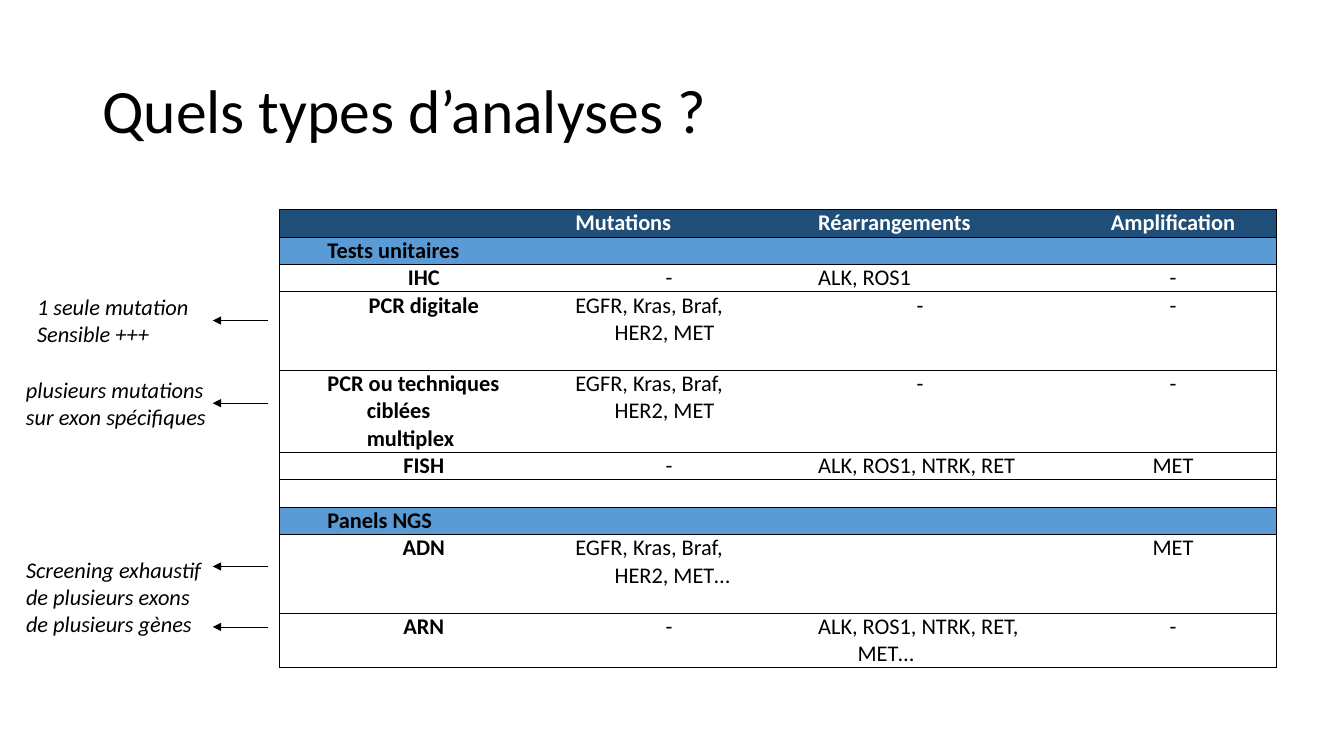
"""Build the slide that compares the types of molecular analyses."""
from lxml.etree import SubElement
from pptx import Presentation
from pptx.dml.color import RGBColor
from pptx.enum.shapes import MSO_CONNECTOR
from pptx.enum.text import MSO_ANCHOR, MSO_AUTO_SIZE, PP_ALIGN
from pptx.oxml.ns import qn
from pptx.util import Pt

BLACK, WHITE, NAVY, BLUE = "000000", "FFFFFF", "1F4E79", "5B9BD5"


def color(hex_code):
    return RGBColor.from_string(hex_code)


def format_font(font, hex_code=BLACK, **values):
    for key, value in {"name": "Calibri", "size": Pt(16), **values}.items():
        setattr(font, key, value)
    font.color.rgb = color(hex_code)


deck = Presentation()
deck.slide_width, deck.slide_height = Pt(960), Pt(540)
slide = deck.slides.add_slide(deck.slide_layouts[5])

title = slide.shapes.title
title.left, title.top, title.width, title.height = Pt(66), Pt(28.8), Pt(828), Pt(104.4)
title.text_frame.text = "Quels types d’analyses ?"
title.text_frame.auto_size = MSO_AUTO_SIZE.NONE
title.text_frame.vertical_anchor = MSO_ANCHOR.MIDDLE
heading = title.text_frame.paragraphs[0]
heading.alignment, heading.line_spacing = PP_ALIGN.LEFT, 0.9
format_font(heading.runs[0].font, size=Pt(44))

LINE, TWO_LINES, THREE_LINES = 19.6, 39, 56
column_widths = [177.1, 173.5, 185, 176.4]
analyses = [
    (LINE, ["", "Mutations", "Réarrangements", "Amplification"]),
    (LINE, ["Tests unitaires", "", "", ""]),
    (LINE, ["IHC", "-", "ALK, ROS1", "-"]),
    (THREE_LINES, ["PCR digitale", "EGFR, Kras, Braf, HER2, MET", "-", "-"]),
    (THREE_LINES, ["PCR ou techniques ciblées multiplex", "EGFR, Kras, Braf, HER2, MET", "-", "-"]),
    (LINE, ["FISH", "-", "ALK, ROS1, NTRK, RET", "MET"]),
    (LINE, ["", "", "", ""]),
    (LINE, ["Panels NGS", "", "", ""]),
    (THREE_LINES, ["ADN", "EGFR, Kras, Braf, HER2, MET…", "", "MET"]),
    (TWO_LINES, ["ARN", "-", "ALK, ROS1, NTRK, RET, MET…", "-"]),
]
row_fills = {0: NAVY, 1: BLUE, 7: BLUE}
centred_labels = {"IHC", "PCR digitale", "FISH", "ADN", "ARN", "-"}
last_column = len(column_widths) - 1

grid = slide.shapes.add_table(
    len(analyses), len(column_widths), Pt(199.4), Pt(149.6),
    Pt(sum(column_widths)), Pt(sum(height for height, _ in analyses))).table
grid.first_row = grid.horz_banding = False
grid._tbl.tblPr.find(qn("a:tableStyleId")).text = "{2D5ABB26-0587-4C30-8999-92F81FD0307C}"
for column, width in zip(grid.columns, column_widths):
    column.width = Pt(width)

for r, (height, labels) in enumerate(analyses):
    grid.rows[r].height = Pt(height)
    for c, label in enumerate(labels):
        cell = grid.cell(r, c)
        cell.margin_left = cell.margin_right = Pt(5)
        cell.margin_top = cell.margin_bottom = 0
        sides = ["lnL"] * (c == 0) + ["lnR"] * (c == last_column) + ["lnT", "lnB"]
        for side in sides:
            border = SubElement(cell._tc.get_or_add_tcPr(), qn(f"a:{side}"), w=str(Pt(0.5)))
            SubElement(SubElement(border, qn("a:solidFill")), qn("a:srgbClr"), val=BLACK)
        if r in row_fills:
            cell.fill.solid()
            cell.fill.fore_color.rgb = color(row_fills[r])
        else:
            cell.fill.background()

        paragraph = cell.text_frame.paragraphs[0]
        if not label:
            SubElement(paragraph._p, qn("a:endParaRPr"), sz="1600")
            continue
        layout = paragraph._p.get_or_add_pPr()
        layout.set("marL", str(Pt(57.6)))
        layout.set("indent", str(Pt(-28.1)))
        centred = label in centred_labels or c == last_column
        paragraph.alignment = PP_ALIGN.CENTER if centred else PP_ALIGN.LEFT
        run = paragraph.add_run()
        run.text = label
        format_font(run.font, WHITE if r == 0 else BLACK, bold=r == 0 or c == 0)

remarks = [
    ("1 seule mutation\nSensible +++", 19.4, 205.9, 124.6, 46, False),
    ("plusieurs mutations sur exon spécifiques", 11.5, 265, 156.2, 46, True),
    ("Screening exhaustif de plusieurs exons de plusieurs gènes", 11.5, 393.8, 140.4, 65.5, True),
]
for remark, left, top, width, height, wraps in remarks:
    frame = slide.shapes.add_textbox(Pt(left), Pt(top), Pt(width), Pt(height)).text_frame
    frame.word_wrap = wraps
    frame.text = remark
    for paragraph in frame.paragraphs:
        format_font(paragraph.runs[0].font, italic=True)

for arrow_y in (229, 288, 404.6, 447.8):
    arrow = slide.shapes.add_connector(
        MSO_CONNECTOR.STRAIGHT, Pt(191.5), Pt(arrow_y), Pt(152), Pt(arrow_y))
    arrow.line.color.rgb = color(BLACK)
    arrow.line.width = Pt(0.5)
    SubElement(arrow.line._get_or_add_ln(), qn("a:tailEnd"), type="triangle")
    SubElement(arrow._element.spPr, qn("a:effectLst"))

deck.save("out.pptx")
